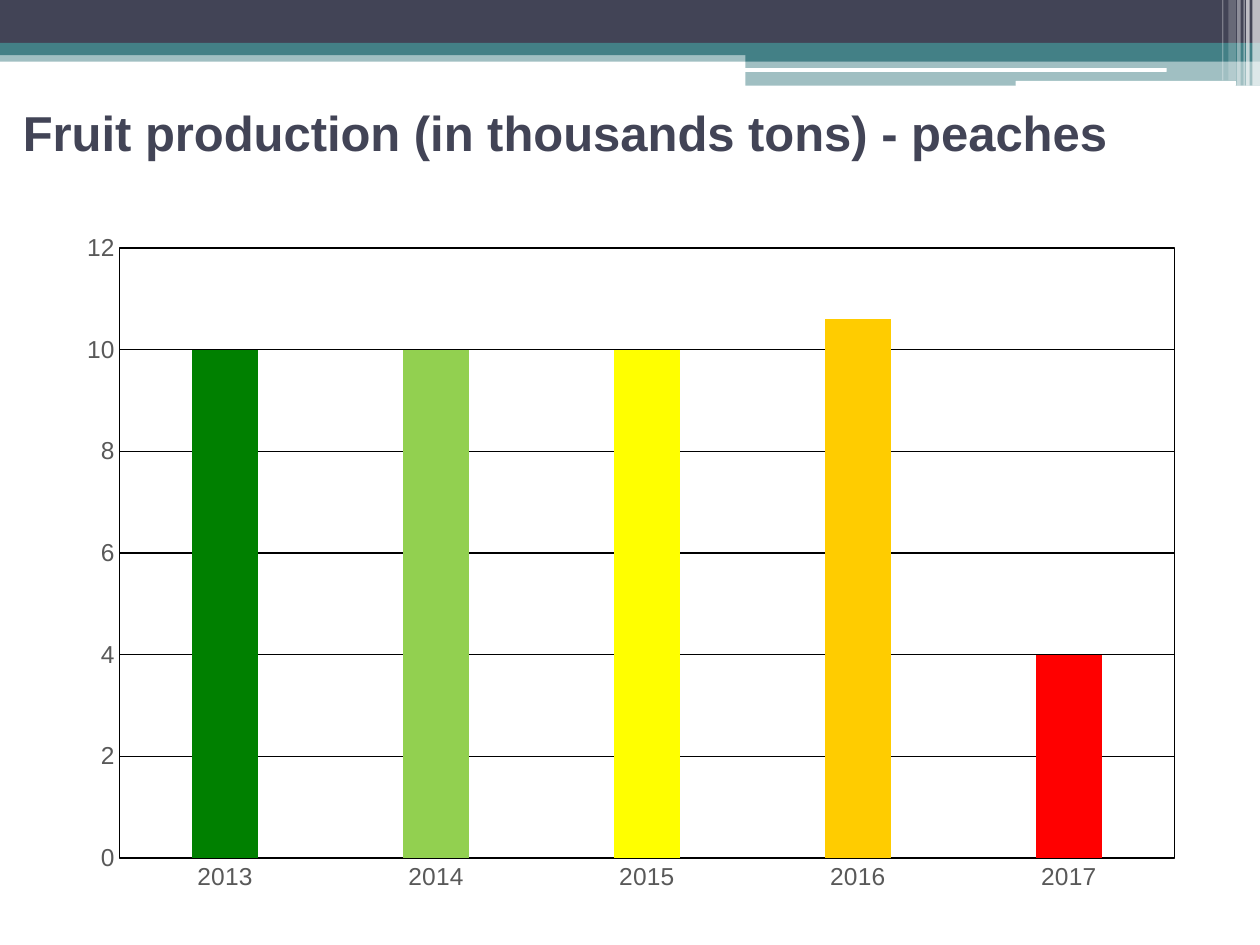
from lxml.etree import SubElement
from pptx import Presentation
from pptx.chart.data import CategoryChartData
from pptx.dml.color import RGBColor
from pptx.enum.chart import XL_CHART_TYPE, XL_TICK_MARK
from pptx.enum.shapes import MSO_SHAPE
from pptx.enum.text import MSO_ANCHOR, PP_ALIGN
from pptx.oxml import parse_xml
from pptx.oxml.ns import nsdecls, qn
from pptx.util import Pt

COLORS = {
    "navy": "424456", "teal": "438086", "white": "FFFFFF", "black": "000000",
    "label": "595959", "series": "53548A",
}
PRODUCTION = {  # year: (thousand tons, bar colour)
    "2013": (10, "008000"),
    "2014": (10, "92D050"),
    "2015": (10, "FFFF00"),
    "2016": (10.6, "FFCC00"),
    "2017": (4, "FF0000"),
}
# left, top, width, height, colour, opacity in percent
BANDS = [
    (0, 28.8, 720, 6.5, "teal", 50),
    (0, 0, 720, 24.5, "navy", 100),
    (0, 24.5, 720, 7, "teal", 100),
    (426, 28, 294, 7.2, "teal", 100),
    (426, 35.2, 294, 13.7, "teal", 50),
]
PILLS = [(425.5, 38.9, 241.2, 2.2), (580.3, 46.2, 126, 2.9)]
# left, width, height, opacity in percent
STRIPES = [
    (715.7, 4.3, 49, 65), (712.1, 2, 49, 65), (710.6, 0.72, 49, 60),
    (707, 2, 49, 40), (702, 4.3, 46, 20), (698.4, 0.72, 46, 30),
]


def rgb(name):
    return RGBColor.from_string(COLORS.get(name, name))


def add_block(page, left, top, width, height, color, opacity=100,
              kind=MSO_SHAPE.RECTANGLE):
    block = page.shapes.add_shape(kind, Pt(left), Pt(top), Pt(width), Pt(height))
    block.shadow.inherit = False
    block.line.fill.background()
    block.fill.solid()
    block.fill.fore_color.rgb = rgb(color)
    if opacity < 100:
        color_node = block.fill._xPr.find(qn("a:solidFill"))[0]
        SubElement(color_node, qn("a:alpha"), val=str(opacity * 1000))
    return block


def add_header(page):
    for band in BANDS:
        add_block(page, *band)
    for pill in PILLS:
        block = add_block(page, *pill, "white", kind=MSO_SHAPE.ROUNDED_RECTANGLE)
        block.adjustments[0] = 0.17
    for left, width, height, opacity in STRIPES:
        add_block(page, left, 0, width, height, "white", opacity)


def format_font(font, size, color, name="Arial", bold=False):
    font.size, font.name, font.bold = Pt(size), name, bold
    font.color.rgb = rgb(color)


def set_title(page, text, **style):
    title = page.shapes.title
    title.left, title.top = Pt(5.8), Pt(48.2)
    title.width, title.height = Pt(714.2), Pt(54)
    frame = title.text_frame
    frame.word_wrap = True
    frame.vertical_anchor = MSO_ANCHOR.MIDDLE
    para = frame.paragraphs[0]
    para.alignment = PP_ALIGN.LEFT
    span = para.add_run()
    span.text = text
    format_font(span.font, **style)


def format_axis(axis):
    axis.major_tick_mark = axis.minor_tick_mark = XL_TICK_MARK.NONE
    format_font(axis.tick_labels.font, 14, "label")


def frame_plot(chart):
    """Fix the inner plot area and outline it."""
    plot_area = chart._chartSpace.chart.plotArea
    for layout in plot_area.findall(qn("c:layout")):
        plot_area.remove(layout)
    plot_area.insert(0, parse_xml(
        f'<c:layout {nsdecls("c")}><c:manualLayout>'
        '<c:layoutTarget val="inner"/><c:xMode val="edge"/><c:yMode val="edge"/>'
        '<c:x val="0.05"/><c:y val="0.04"/><c:w val="0.93"/><c:h val="0.89"/>'
        '</c:manualLayout></c:layout>'))
    plot_area.append(parse_xml(
        f'<c:spPr {nsdecls("c", "a")}><a:noFill/><a:ln w="9525"><a:solidFill>'
        f'<a:srgbClr val="{COLORS["black"]}"/></a:solidFill></a:ln></c:spPr>'))


def add_production_chart(page):
    data = CategoryChartData()
    data.categories = list(PRODUCTION)
    data.add_series("Series 1", [tons for tons, _ in PRODUCTION.values()])
    chart = page.shapes.add_chart(
        XL_CHART_TYPE.COLUMN_CLUSTERED, Pt(36), Pt(126), Pt(648), Pt(391.7), data
    ).chart
    chart.has_legend = chart.has_title = False
    format_font(chart.font, 10, "black", name="Cambria")

    # Axes and gridlines
    years, tons = chart.category_axis, chart.value_axis
    format_axis(years)
    format_axis(tons)
    tons.minimum_scale, tons.maximum_scale, tons.major_unit = 0, 12, 2
    tons.format.line.fill.background()
    tons.has_major_gridlines = True
    for line in (years.format.line, tons.major_gridlines.format.line):
        line.color.rgb = rgb("black")
        line.width = Pt(0.75)

    # Bars
    plot = chart.plots[0]
    plot.gap_width, plot.overlap = 219, -27
    plot.vary_by_categories = False
    series = plot.series[0]
    series.format.fill.solid()
    series.format.fill.fore_color.rgb = rgb("series")
    for index, (_, color) in enumerate(PRODUCTION.values()):
        fill = series.points[index].format.fill
        fill.solid()
        fill.fore_color.rgb = rgb(color)
    frame_plot(chart)


def main():
    deck = Presentation()
    deck.slide_width, deck.slide_height = Pt(720), Pt(540)
    page = deck.slides.add_slide(deck.slide_layouts[5])
    add_header(page)
    set_title(page, "Fruit production (in thousands tons) - peaches",
              size=28, color="navy", bold=True)
    add_production_chart(page)
    deck.save("out.pptx")


if __name__ == "__main__":
    main()
